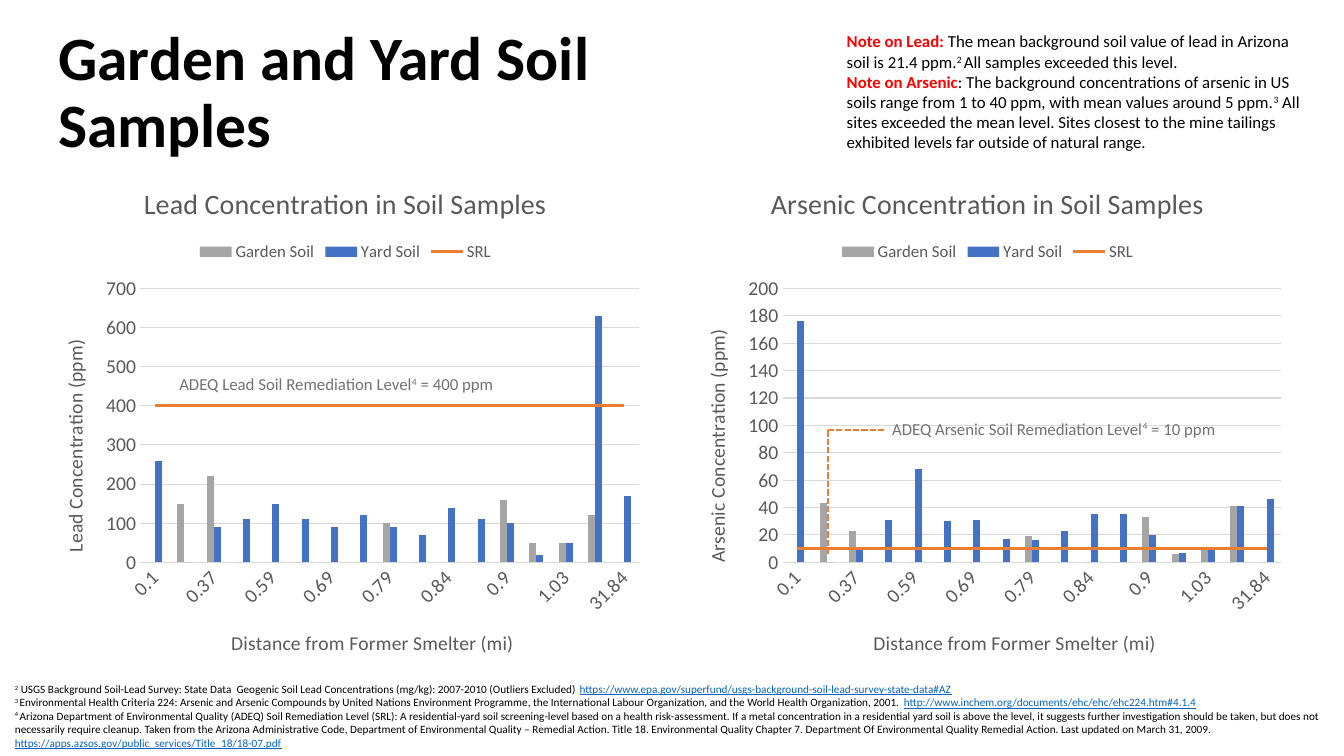
from lxml import etree
from pptx import Presentation
from pptx.chart.data import CategoryChartData
from pptx.dml.color import RGBColor
from pptx.enum.chart import XL_CHART_TYPE, XL_LEGEND_POSITION, XL_MARKER_STYLE, XL_TICK_MARK
from pptx.enum.dml import MSO_LINE
from pptx.enum.shapes import MSO_CONNECTOR
from pptx.enum.text import MSO_ANCHOR
from pptx.oxml import parse_xml
from pptx.oxml.ns import nsdecls, qn
from pptx.util import Inches, Pt

COLUMNS = XL_CHART_TYPE.COLUMN_CLUSTERED
LEGEND_TOP = XL_LEGEND_POSITION.TOP
NO_MARKER = XL_MARKER_STYLE.NONE
NO_TICKS = XL_TICK_MARK.NONE
STRAIGHT = MSO_CONNECTOR.STRAIGHT
SQUARE_DOT = MSO_LINE.SQUARE_DOT
TOP, MIDDLE = MSO_ANCHOR.TOP, MSO_ANCHOR.MIDDLE

BLACK = RGBColor(0x00, 0x00, 0x00)
RED = RGBColor(0xFF, 0x00, 0x00)
LINK_BLUE = RGBColor(0x05, 0x63, 0xC1)
LABEL_GRAY = RGBColor(0x76, 0x71, 0x71)
CHART_GRAY = RGBColor(0x59, 0x59, 0x59)
GRID_GRAY = RGBColor(0xD9, 0xD9, 0xD9)
GARDEN_GRAY = RGBColor(0xA5, 0xA5, 0xA5)
YARD_BLUE = RGBColor(0x44, 0x72, 0xC4)
SRL_ORANGE = RGBColor(0xED, 0x7D, 0x31)
FONT = "Calibri"

DISTANCES = ["0.1", "0.31", "0.37", "0.53", "0.59", "0.68", "0.69", "0.7", "0.79",
             "0.83", "0.84", "0.86", "0.9", "0.96", "1.03", "1.06", "31.84"]
LEAD_GARDEN = [0, 150, 220, 0, 0, 0, 0, 0, 100, 0, 0, 0, 160, 50, 50, 120, 0]
LEAD_YARD = [260, 0, 90, 110, 150, 110, 90, 120, 90, 70, 140, 110, 100, 20, 50, 630, 170]
ARSENIC_GARDEN = [0, 43, 23, 0, 0, 0, 0, 0, 19, 0, 0, 0, 33, 6, 10, 41, 0]
ARSENIC_YARD = [176, 0, 11, 31, 68, 30, 31, 17, 16, 23, 35, 35, 20, 7, 11, 41, 46]

# Each paragraph is a list of (text, style) runs
NOTES = [
    [("Note on Lead: ", "key"),
     ("The mean background soil value of lead in Arizona soil is 21.4 ppm.", ""),
     ("2 ", "sup"), ("All samples exceeded this level.", "")],
    [("Note on Arsenic", "key"),
     (": The background concentrations of arsenic in US soils range from 1 to 40 ppm, "
      "with mean values around 5 ppm.", ""),
     ("3", "sup"),
     (" All sites exceeded the mean level. Sites closest to the mine tailings exhibited "
      "levels far outside of natural range.", "")],
]
SOURCES = [
    [("2", "sup"),
     (" USGS Background Soil-Lead Survey: State Data  Geogenic Soil Lead Concentrations "
      "(mg/kg): 2007-2010 (Outliers Excluded) ", ""),
     ("https://www.epa.gov/superfund/usgs-background-soil-lead-survey-state-data#AZ", "link")],
    [("3 ", "sup"),
     ("Environmental Health Criteria 224: Arsenic and Arsenic Compounds by United Nations "
      "Environment Programme, the International Labour Organization, and the World Health "
      "Organization, 2001. ", ""),
     ("http://www.inchem.org/documents/ehc/ehc/ehc224.htm#4.1.4", "link")],
    [("4 ", "sup"),
     ("Arizona Department of Environmental Quality (ADEQ) Soil Remediation Level (SRL): "
      "A residential-yard soil screening-level based on a health risk-assessment. If a metal "
      "concentration in a residential yard soil is above the level, it suggests further "
      "investigation should be taken, but does not necessarily require cleanup. Taken from the "
      "Arizona Administrative Code, Department of Environmental Quality – Remedial Action. "
      "Title 18. Environmental Quality Chapter 7. Department Of Environmental Quality Remedial "
      "Action. Last updated on March 31, 2009. ", ""),
     ("https://apps.azsos.gov/public_services/Title_18/18-07.pdf", "link")],
]


def set_font(font, size, color, bold=False):
    font.name, font.size, font.bold = FONT, Pt(size), bold
    font.color.rgb = color


def add_text(s, box, paragraphs, size, color=BLACK, bold=False, anchor=TOP, spacing=None):
    tf = s.shapes.add_textbox(*map(Inches, box)).text_frame
    tf.word_wrap = True
    tf.vertical_anchor = anchor
    for i, runs in enumerate(paragraphs):
        p = tf.paragraphs[0] if i == 0 else tf.add_paragraph()
        p.line_spacing = spacing
        for text, style in runs:
            r = p.add_run()
            r.text = text
            run_color = {"key": RED, "link": LINK_BLUE}.get(style, color)
            set_font(r.font, size, run_color, bold or style == "key")
            if style == "link":
                r.font.underline = True
            elif style == "sup":
                r.font._element.set("baseline", "30000")


def set_title(owner, text, size):
    tf = owner.text_frame
    tf.text = text
    set_font(tf.paragraphs[0].runs[0].font, size, CHART_GRAY)


def move_last_series_to_line(chart):
    """Draw the last column series as a line on the same axes."""
    bar = chart._chartSpace.find(".//" + qn("c:barChart"))
    ser = bar.findall(qn("c:ser"))[-1]
    for column_only in ser.findall(qn("c:invertIfNegative")):
        ser.remove(column_only)
    line = parse_xml(f'<c:lineChart {nsdecls("c")}><c:grouping val="standard"/>'
                     '<c:varyColors val="0"/><c:marker val="1"/></c:lineChart>')
    line.insert(2, ser)
    for axis_id in bar.findall(qn("c:axId")):
        etree.SubElement(line, qn("c:axId")).set("val", axis_id.get("val"))
    bar.addnext(line)


def set_plot_area(chart, **fractions):
    """Fix the inner plot area as fractions of the chart."""
    plot_area = chart._chartSpace.find(".//" + qn("c:plotArea"))
    for old in plot_area.findall(qn("c:layout")):
        plot_area.remove(old)
    sizes = "".join(f'<c:{key} val="{value}"/>' for key, value in fractions.items())
    plot_area.insert(0, parse_xml(
        f'<c:layout {nsdecls("c")}><c:manualLayout><c:layoutTarget val="inner"/>'
        f'<c:xMode val="edge"/><c:yMode val="edge"/>{sizes}</c:manualLayout></c:layout>'))


def style_axes(chart, metal, top, step):
    cat, val = chart.category_axis, chart.value_axis
    for axis, title in ((cat, "Distance from Former Smelter (mi)"),
                        (val, f"{metal} Concentration (ppm)")):
        set_title(axis.axis_title, title, 14)
        set_font(axis.tick_labels.font, 14, CHART_GRAY)
        axis.major_tick_mark = axis.minor_tick_mark = NO_TICKS
    val.minimum_scale, val.maximum_scale, val.major_unit = 0, top, step
    val.format.line.fill.background()
    for line in (cat.format.line, val.major_gridlines.format.line):
        line.color.rgb, line.width = GRID_GRAY, Pt(0.75)
    # Slanted labels, every second distance
    cat._element.find(qn("c:txPr")).find(qn("a:bodyPr")).set("rot", "-2700000")
    skip = parse_xml(f'<c:tickLblSkip {nsdecls("c")} val="2"/>')
    cat._element.find(qn("c:noMultiLvlLbl")).addprevious(skip)


def add_soil_chart(s, left, metal, garden, yard, srl, top, step):
    data = CategoryChartData()
    data.categories = DISTANCES
    data.add_series("Garden Soil", garden)
    data.add_series("Yard Soil", yard)
    data.add_series("SRL", [srl] * len(DISTANCES))
    box = map(Inches, (left, 1.62, 6.07, 5.09))
    chart = s.shapes.add_chart(COLUMNS, *box, data).chart
    set_font(chart.font, 10, BLACK)
    set_title(chart.chart_title, f"{metal} Concentration in Soil Samples", 20)
    chart.chart_title.include_in_layout = False
    chart.has_legend = True
    chart.legend.position = LEGEND_TOP
    chart.legend.include_in_layout = False
    set_font(chart.legend.font, 12, CHART_GRAY)
    move_last_series_to_line(chart)
    columns, line = chart.plots
    columns.gap_width, columns.overlap = 219, 0
    columns.vary_by_categories = False
    for series, color in zip(columns.series, (GARDEN_GRAY, YARD_BLUE)):
        series.format.fill.solid()
        series.format.fill.fore_color.rgb = color
    level = line.series[0]
    level.format.line.color.rgb, level.format.line.width = SRL_ORANGE, Pt(2.25)
    level.marker.style = NO_MARKER
    level.smooth = False
    style_axes(chart, metal, top, step)
    set_plot_area(chart, x=0.165, y=0.244, w=0.815, h=0.534)


def add_dashed_line(s, *ends):
    line = s.shapes.add_connector(STRAIGHT, *map(Inches, ends))
    line.line.color.rgb, line.line.width = SRL_ORANGE, Pt(1.5)
    line.line.dash_style = SQUARE_DOT
    etree.SubElement(line._element.spPr, qn("a:effectLst"))


def add_level_label(s, box, metal, level):
    runs = [(f"ADEQ {metal} Soil Remediation Level", ""), ("4", "sup"), (f" = {level} ppm", "")]
    add_text(s, box, [runs], 12, LABEL_GRAY)


def main():
    prs = Presentation()
    prs.slide_width, prs.slide_height = Inches(13.33), Inches(7.5)
    s = prs.slides.add_slide(prs.slide_layouts[6])

    # Charts
    add_soil_chart(s, 6.76, "Arsenic", ARSENIC_GARDEN, ARSENIC_YARD, 10, 200, 20)
    add_soil_chart(s, 0.39, "Lead", LEAD_GARDEN, LEAD_YARD, 400, 700, 100)

    # Title and sources
    add_text(s, (0.48, 0.21, 7.55, 1.45), [[("Garden and Yard Soil Samples", "")]], 44,
             bold=True, anchor=MIDDLE, spacing=0.9)
    add_text(s, (0.05, 6.72, 13.33, 0.77), SOURCES, 8)

    # Remediation levels, with the dashed pointer to the arsenic line
    add_level_label(s, (1.68, 3.66, 3.67, 0.53), "Lead", 400)
    add_dashed_line(s, 8.21, 5.5, 8.21, 4.27)
    add_dashed_line(s, 8.21, 4.27, 8.77, 4.27)
    add_level_label(s, (8.75, 4.1, 3.59, 0.38), "Arsenic", 10)

    # Notes
    add_text(s, (8.3, 0.26, 4.7, 1.31), NOTES, 12)
    prs.save("out.pptx")


if __name__ == "__main__":
    main()
